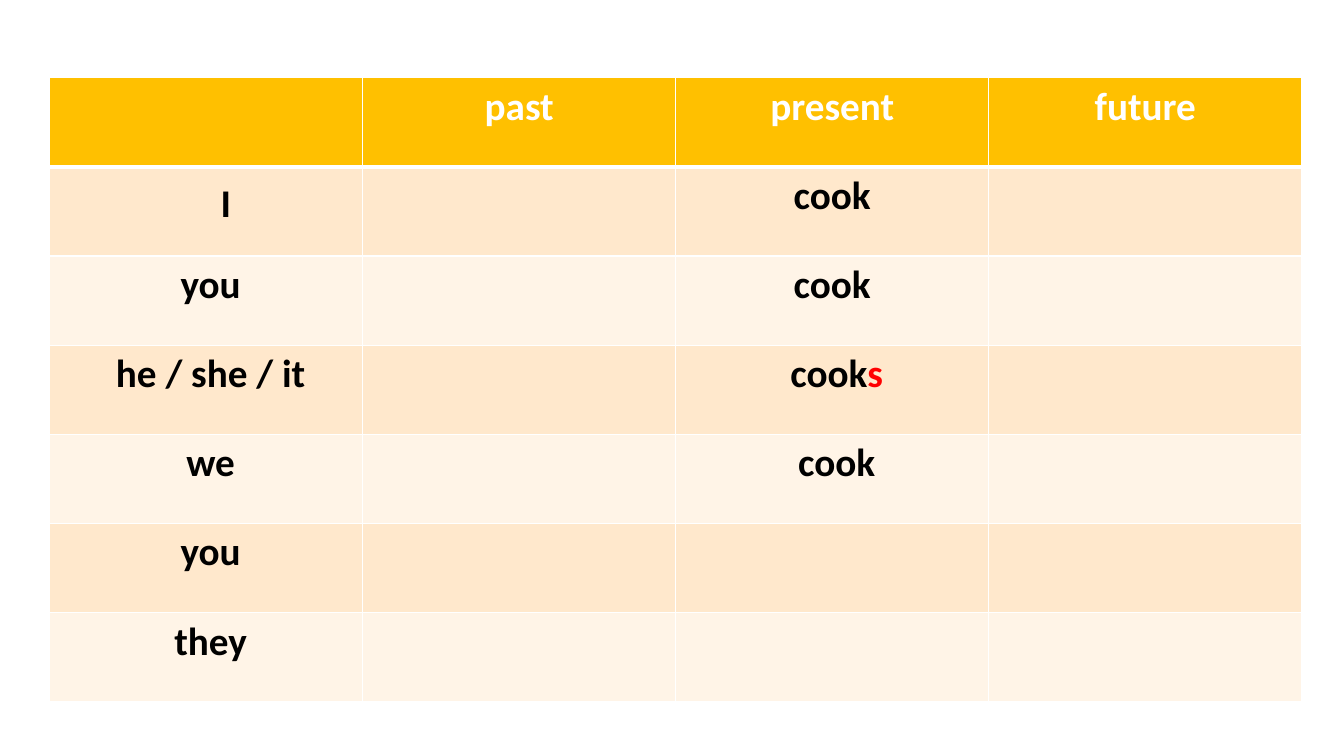
import pptx
import pptx.dml.color
import pptx.enum.text
import pptx.oxml
import pptx.oxml.ns
import pptx.util

COLORS = {
    "header": "FFC000",
    "odd": "FFE8CC",
    "even": "FFF4E7",
    "white": "FFFFFF",
    "black": "000000",
    "red": "FF0000",
}

CONJUGATION = [
    ["", "past", "present", "future"],
    ["　I", "", "cook", ""],
    [" you", "", "cook", ""],
    [" he / she / it", "", [(" cook", "black"), ("s", "red")], ""],
    [" we", "", " cook", ""],
    [" you", "", "", ""],
    [" they", "", "", ""],
]


def rgb(name):
    return pptx.dml.color.RGBColor.from_string(COLORS[name])


class SlideBuilder:
    text_format = {"name": "Calibri", "size": pptx.util.Pt(28), "bold": True}
    thin = 1
    thick = 3

    def __init__(self, slide):
        self.slide = slide

    def add_table(self, rows, left, top, column_width, row_height):
        frame = self.slide.shapes.add_table(
            len(rows),
            len(rows[0]),
            pptx.util.Pt(left),
            pptx.util.Pt(top),
            pptx.util.Pt(column_width * len(rows[0])),
            pptx.util.Pt(row_height * len(rows)),
        )
        table = frame.table
        table.horz_banding = False
        for column in table.columns:
            column.width = pptx.util.Pt(column_width)
        for row_index, contents in enumerate(rows):
            table.rows[row_index].height = pptx.util.Pt(row_height)
            for column_index, content in enumerate(contents):
                self.fill_cell(table.cell(row_index, column_index), content, row_index)

    def fill_cell(self, cell, content, row_index):
        if row_index == 0:
            fill, color = "header", "white"
        else:
            fill, color = ("odd" if row_index % 2 else "even"), "black"
        self.add_borders(
            cell,
            {
                "lnL": self.thin,
                "lnR": self.thin,
                "lnT": self.thick if row_index == 1 else self.thin,
                "lnB": self.thick if row_index == 0 else self.thin,
            },
        )
        cell.fill.solid()
        cell.fill.fore_color.rgb = rgb(fill)
        if content:
            spans = [(content, color)] if isinstance(content, str) else content
            self.add_text(cell.text_frame.paragraphs[0], spans)

    def add_text(self, para, spans):
        para.alignment = pptx.enum.text.PP_ALIGN.CENTER
        for text, color in spans:
            span = para.add_run()
            span.text = text
            for attribute, value in self.text_format.items():
                setattr(span.font, attribute, value)
            span.font.color.rgb = rgb(color)

    def add_borders(self, cell, widths):
        properties = cell._tc.get_or_add_tcPr()
        namespace = pptx.oxml.ns.nsdecls("a")
        for side, width in widths.items():
            properties.append(
                pptx.oxml.parse_xml(
                    f'<a:{side} {namespace} w="{pptx.util.Pt(width)}"><a:solidFill>'
                    f'<a:srgbClr val="{COLORS["white"]}"/></a:solidFill></a:{side}>'
                )
            )


def main():
    deck = pptx.Presentation()
    deck.slide_width = pptx.util.Pt(960)
    deck.slide_height = pptx.util.Pt(540)
    page = SlideBuilder(deck.slides.add_slide(deck.slide_layouts[6]))
    page.add_table(CONJUGATION, left=35.5, top=55.5, column_width=223.6, row_height=63.7)
    deck.save("out.pptx")


if __name__ == "__main__":
    main()
